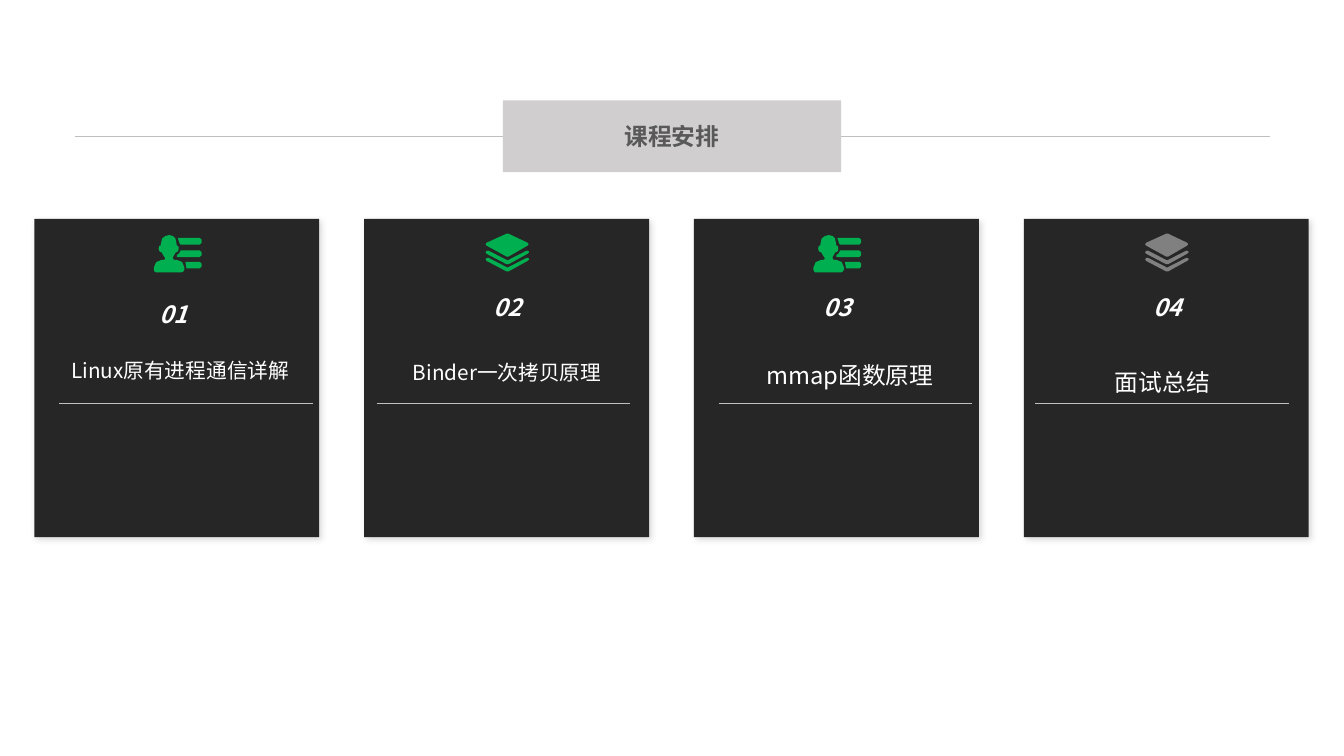
from dataclasses import dataclass

from lxml import etree
from pptx import Presentation
from pptx import util as u
from pptx.dml.color import RGBColor
from pptx.enum import shapes, text
from pptx.oxml import ns

Inches = u.Inches


@dataclass(frozen=True)
class Theme:
    font: str = "Noto Sans CJK SC"
    banner: str = "D0CECE"
    title: str = "595959"
    card: str = "262626"
    rule: str = "BFBFBF"
    white: str = "FFFFFF"
    green: str = "00B050"
    grey: str = "808080"
    shadow: str = "000000"
    large: float = 17.9
    small: float = 15.6
    hairline: float = 0.25


T = Theme()

PERSON = [
    [(330, 280), (480, 280), (500, 300), (500, 330), (480, 350), (340, 350), (340, 340)],
    [(280, 160), (480, 160), (500, 180), (500, 210), (480, 230), (240, 230), (240, 210),
     (265, 190)],
    [(250, 30), (480, 30), (500, 50), (500, 80), (480, 100), (280, 100), (270, 90)],
    [(160, 0), (200, 10), (226, 36), (240, 110), (255, 115), (260, 140), (255, 165),
     (240, 180), (230, 180), (200, 230), (200, 240), (205, 255), (220, 260), (240, 260),
     (295, 281), (320, 340), (320, 360), (310, 380), (290, 390), (20, 390), (5, 380),
     (0, 360), (0, 340), (24, 284), (80, 260), (100, 260), (115, 255), (120, 240),
     (110, 230), (80, 180), (70, 180), (55, 165), (50, 140), (55, 115), (70, 110),
     (86, 36), (120, 10)],
]
CHEVRON = [(10, 260), (30, 258), (230, 360), (430, 258), (450, 262), (455, 275),
           (440, 290), (240, 400), (220, 400), (10, 290), (0, 275)]
LAYERS = [
    CHEVRON,
    [(x, y - 75) for x, y in CHEVRON],
    [(220, 5), (240, 5), (440, 100), (450, 115), (440, 130), (240, 245), (220, 245),
     (10, 130), (0, 115), (10, 100)],
]
ICONS = {"person": (PERSON, 1.25, 2.46), "layers": (LAYERS, 1.27, 2.44)}

CARDS = [
    dict(icon="person", colour=T.green, rule_x=0.62, number_at=(0.79, 3.03),
         label="Linux原有进程通信详解", label_box=(0.49, 3.65, 2.79, 0.44), size=T.small),
    dict(icon="layers", colour=T.green, rule_x=3.94, number_at=(4.28, 2.96),
         label="Binder一次拷贝原理", label_box=(3.91, 3.67, 2.79, 0.44), size=T.small),
    dict(icon="person", colour=T.green, rule_x=7.52, number_at=(7.73, 2.96),
         label="mmap函数原理", label_box=(7.3, 3.7, 3.18, 0.44), size=T.large),
    dict(icon="layers", colour=T.grey, rule_x=10.83, number_at=(11.18, 2.96),
         label="面试总结", label_box=(10.57, 3.56, 3.18, 0.88), size=T.large),
]


def rgb(value):
    return RGBColor.from_string(value)


def write(sp, words, size=T.large, colour=T.white, bold=False, italic=False):
    tf = sp.text_frame
    tf.word_wrap = True
    tf.auto_size = text.MSO_AUTO_SIZE.NONE
    tf.vertical_anchor = text.MSO_ANCHOR.MIDDLE
    tf.margin_left = tf.margin_right = Inches(0.06)
    tf.margin_top = tf.margin_bottom = Inches(0.03)
    p = tf.paragraphs[0]
    p.alignment = text.PP_ALIGN.CENTER
    r = p.add_run()
    r.text = words
    r.font.name = T.font
    r.font.size = u.Pt(size)
    r.font.bold = bold
    r.font.italic = italic
    r.font.color.rgb = rgb(colour)
    etree.SubElement(r.font._element, ns.qn("a:ea"), typeface=T.font)


def add_text(s, box, words, **style):
    sp = s.shapes.add_textbox(*map(Inches, box))
    write(sp, words, **style)


def add_rule(s, x, y, width):
    line = s.shapes.add_connector(shapes.MSO_CONNECTOR.STRAIGHT, Inches(x), Inches(y),
                                  Inches(x + width), Inches(y))
    line.line.color.rgb = rgb(T.rule)
    line.line.width = u.Pt(T.hairline)
    etree.SubElement(line.element.spPr, ns.qn("a:effectLst"))
    return line


def paint(sp, colour):
    sp.shadow.inherit = False
    sp.fill.solid()
    sp.fill.fore_color.rgb = rgb(colour)
    sp.line.fill.background()


def add_panel(s, x):
    sp = s.shapes.add_shape(shapes.MSO_SHAPE.RECTANGLE, Inches(x), Inches(2.29),
                            Inches(2.98), Inches(3.33))
    paint(sp, T.card)
    effects = sp.element.spPr.find(ns.qn("a:effectLst"))
    shadow = etree.SubElement(effects, ns.qn("a:outerShdw"), blurRad=str(u.Pt(5)),
                              dist=str(u.Pt(2)), dir=str(45 * 60000), rotWithShape="0")
    colour = etree.SubElement(shadow, ns.qn("a:srgbClr"), val=T.shadow)
    etree.SubElement(colour, ns.qn("a:alpha"), val="15000")


def add_icon(s, name, card_x, colour):
    outlines, dx, y = ICONS[name]
    first, *others = outlines
    builder = s.shapes.build_freeform(*first[0], scale=Inches(0.001))
    builder.add_line_segments(first[1:], close=True)
    for outline in others:
        builder.move_to(*outline[0])
        builder.add_line_segments(outline[1:], close=True)
    paint(builder.convert_to_shape(Inches(card_x + dx), Inches(y)), colour)


def add_title(s, words):
    rule = add_rule(s, 0.78, 1.42, 12.51)
    title = s.shapes.title
    title.left, title.top, title.width, title.height = map(Inches, (5.26, 1.05, 3.54, 0.75))
    title.fill.solid()
    title.fill.fore_color.rgb = rgb(T.banner)
    write(title, words, colour=T.title, bold=True)
    rule.element.addnext(title.element)


def add_card(s, i, card):
    x = 0.36 + 3.45 * i
    add_panel(s, x)
    add_icon(s, card["icon"], x, card["colour"])
    add_rule(s, card["rule_x"], 4.22, 2.65)
    add_text(s, (*card["number_at"], 2.06, 0.51), f"{i + 1:02}", bold=True, italic=True)
    add_text(s, card["label_box"], card["label"], size=card["size"])


def main():
    prs = Presentation()
    prs.slide_width, prs.slide_height = Inches(14.06), Inches(7.91)
    s = prs.slides.add_slide(prs.slide_layouts.get_by_name("Title Only"))
    add_title(s, "课程安排")
    for i, card in enumerate(CARDS):
        add_card(s, i, card)
    prs.save("out.pptx")


if __name__ == "__main__":
    main()
